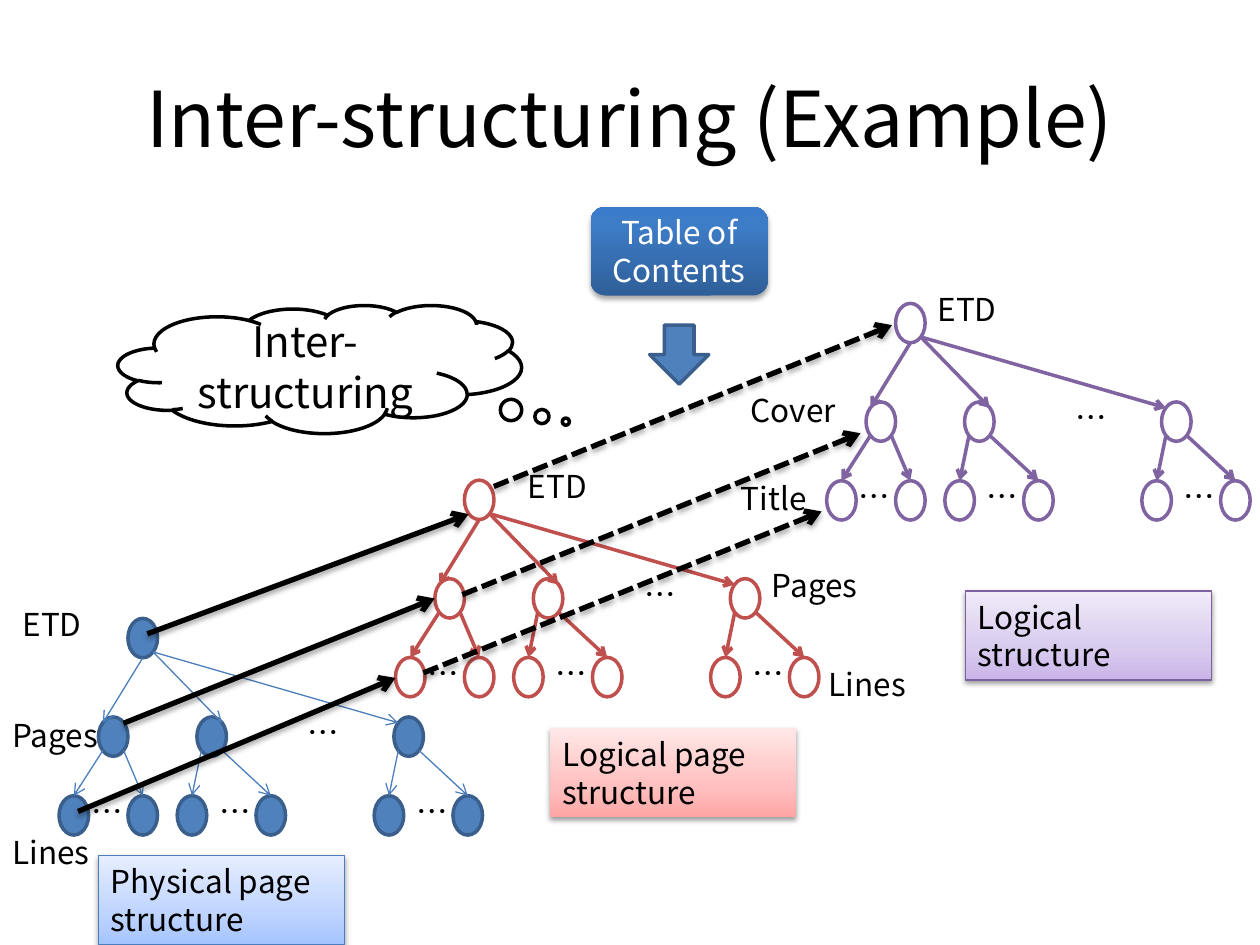
from lxml.etree import SubElement
from pptx import Presentation
from pptx.dml.color import RGBColor
from pptx.enum.dml import MSO_LINE
from pptx.enum.shapes import MSO_CONNECTOR, MSO_SHAPE
from pptx.enum.text import MSO_ANCHOR, MSO_AUTO_SIZE, PP_ALIGN
from pptx.oxml.ns import qn
from pptx.util import Pt

FONT = "Noto Sans CJK KR"
BLACK, WHITE = "000000", "FFFFFF"
BOX = {"word_wrap": True, "auto_size": MSO_AUTO_SIZE.SHAPE_TO_FIT_TEXT}
MIDDLE = {"word_wrap": True, "vertical_anchor": MSO_ANCHOR.MIDDLE}

ROOT = (7, 0)
MIDS = [(4, 10), (14, 10), (34, 10)]
LEAVES = [(0, 18), (7, 18), (12, 18), (20, 18), (32, 18), (40, 18)]
DOTS = [(24, 9), (2, 17), (15, 17), (35, 17)]
NEAR, FAR = 0.15, 0.85
ROOT_EDGES = [((0.5, 1), (NEAR, NEAR)), ((FAR, FAR), (FAR, NEAR)), ((FAR, FAR), (NEAR, NEAR))]

LEVELS = [
    {"at": (33.75, 353.4), "fill": "4F81BD", "outline": "3A5F8C", "edge": "4B7EBC", "weight": 0.75,
     "labels": [("ETD", -28, -11.5), ("Pages", -33.75, 52), ("Lines", -33.75, 119)],
     "panel": ("Physical page structure", 22.5, 135.5),
     "stops": [(0, "A4C4FF"), (35, "BFD4FF"), (100, "E6EEFF")], "border": "4B7EBC"},
    {"at": (226, 274.4), "fill": WHITE, "outline": "C0504D", "edge": "C0504D", "weight": 2,
     "labels": [("ETD", 68.5, -11), ("Pages", 208, 45.4), ("Lines", 240.5, 102.2)],
     "panel": ("Logical page structure", 88.5, 141.8),
     "stops": [(0, "FFA6A5"), (35, "FFC0BF"), (100, "FFE7E7")], "border": None},
    {"at": (472.4, 173.4), "fill": WHITE, "outline": "8064A2", "edge": "8064A2", "weight": 2,
     "labels": [("ETD", 56.2, -11.5), ("Cover", -50.4, 46.2), ("Title", -56.2, 96.6)],
     "panel": ("Logical structure", 79.2, 164.3),
     "stops": [(0, "C9B5E8"), (35, "D8CBEE"), (100, "F0EAF9")], "border": "7D60A0"},
]
SOLID = [((44.6, 463.7), (226, 387.4)), ((70.6, 413.3), (248.4, 342)), ((84.2, 362.2), (267.8, 293.8))]
DASHED = [((x, y), (x + 227.5, y - 92.2)) for x, y in [(282.2, 278), (264.2, 339.8), (242, 384.5)]]


def rgb(value):
    """Turn a hex string into a colour."""
    return RGBColor.from_string(value)


def assign(obj, fmt):
    """Set every attribute named in a dict of format values."""
    for name, value in fmt.items():
        setattr(obj, name, value)


def write(shape, text, size=18, color=BLACK, align=PP_ALIGN.LEFT, frame=BOX):
    """Put one formatted paragraph into a shape."""
    tf = shape.text_frame
    assign(tf, frame)
    p = tf.paragraphs[0]
    p.alignment = align
    r = p.add_run()
    r.text = text
    assign(r.font, {"name": FONT, "size": Pt(size)})
    r.font.color.rgb = rgb(color)


def add_shadow(effects, alpha, dist):
    """Add a soft shadow that falls straight down."""
    shadow = SubElement(effects, qn("a:outerShdw"), blurRad=str(Pt(3.1)), dist=str(Pt(dist)),
                        dir="5400000", rotWithShape="0")
    color = SubElement(shadow, qn("a:srgbClr"), val=BLACK)
    SubElement(color, qn("a:alpha"), val=str(alpha * 1000))


def add_block(s, kind, box, fill=None, line=None, weight=2):
    """Add a preset shape with a plain fill and outline."""
    sp = s.shapes.add_shape(kind, *map(Pt, box))
    sp.shadow.inherit = False
    if fill:
        sp.fill.solid()
        sp.fill.fore_color.rgb = rgb(fill)
    if line:
        sp.line.color.rgb = rgb(line)
        sp.line.width = Pt(weight)
    else:
        sp.line.fill.background()
    return sp


def add_gradient_block(s, kind, box, stops, line=None, alpha=38, dist=1.6):
    """Add a shadowed shape with a gradient that rises from the bottom."""
    sp = add_block(s, kind, box, line=line, weight=0.75)
    sp.fill.gradient()
    sp.fill.gradient_angle = 90
    stop_list = sp.element.spPr.find(qn("a:gradFill")).find(qn("a:gsLst"))
    for stop in list(stop_list):
        stop_list.remove(stop)
    for position, color in stops:
        stop = SubElement(stop_list, qn("a:gs"), pos=str(position * 1000))
        SubElement(stop, qn("a:srgbClr"), val=color)
    add_shadow(sp.element.spPr.find(qn("a:effectLst")), alpha, dist)
    return sp


def add_arrow(s, start, end, color, weight, dash=None, shadow=False):
    """Add a straight line with an open arrowhead at its end."""
    c = s.shapes.add_connector(MSO_CONNECTOR.STRAIGHT, *map(Pt, (*start, *end)))
    c.line.color.rgb = rgb(color)
    assign(c.line, {"width": Pt(weight), "dash_style": dash})
    spPr = c.element.spPr
    SubElement(spPr.find(qn("a:ln")), qn("a:tailEnd"), type="arrow")
    effects = SubElement(spPr, qn("a:effectLst"))
    if shadow:
        add_shadow(effects, 35, 1.8)


def add_label(s, text, x, y, w=67.5):
    """Add a one-line text box."""
    write(s.shapes.add_textbox(Pt(x), Pt(y), Pt(w), Pt(29)), text)


def add_tree(s, x, y, w, level):
    """Draw a three-tier tree on a grid of 43 units across its width."""
    unit = w / 43

    def at(node, part=(0, 0)):
        return x + (node[0] + 3 * part[0]) * unit, y + (node[1] + 4 * part[1]) * unit

    for node in [ROOT, *MIDS, *LEAVES]:
        add_block(s, MSO_SHAPE.OVAL, (*at(node), 3 * unit, 4 * unit), level["fill"], level["outline"])
    for dots in DOTS:
        add_label(s, "…", *at(dots), 5 * unit)
    edges = [(at(ROOT, a), at(mid, b)) for mid, (a, b) in zip(MIDS, ROOT_EDGES)]
    for i, leaf in enumerate(LEAVES):
        edges.append((at(MIDS[i // 2], (FAR if i % 2 else NEAR, FAR)), at(leaf, (0.5, 0))))
    for start, end in edges:
        add_arrow(s, start, end, level["edge"], level["weight"])


def add_level(s, x, y, w, level):
    """Draw one structure: its tree, tier labels and name panel."""
    add_tree(s, x, y, w, level)
    for text, dx, dy in level["labels"]:
        add_label(s, text, x + dx, y + dy)
    text, dx, dy = level["panel"]
    panel = add_gradient_block(s, MSO_SHAPE.RECTANGLE, (x + dx, y + dy, 140.6, 50.9),
                               level["stops"], level["border"])
    write(panel, text)


def add_contents(s, x, y, w, h):
    """Draw the table of contents block and the arrow below it."""
    block = add_gradient_block(s, MSO_SHAPE.ROUNDED_RECTANGLE, (x, y, w, 0.5 * h),
                               [(0, "2F5F99"), (80, "3D7CC7"), (100, "3A7CCB")], alpha=35, dist=1.8)
    write(block, "Table of Contents", 18, WHITE, PP_ALIGN.CENTER, MIDDLE)
    side = h / 3
    add_block(s, MSO_SHAPE.DOWN_ARROW, (x + (w - side) / 2, y + h - side, side, side), "4F81BD", "3A5F8C")


def add_thought(s, x, y, w, h):
    """Draw the thought cloud."""
    cloud = add_block(s, MSO_SHAPE.CLOUD_CALLOUT, (x, y, w, h), WHITE, BLACK)
    cloud.adjustments[0], cloud.adjustments[1] = 0.61, 0.41
    write(cloud, "Inter-structuring", 24, BLACK, PP_ALIGN.CENTER, MIDDLE)


def add_title(s, x, y, w, h):
    """Place and format the title placeholder."""
    title = s.shapes.title
    assign(title, {"left": Pt(x), "top": Pt(y), "width": Pt(w), "height": Pt(h)})
    write(title, "Inter-structuring (Example)", 44, BLACK, PP_ALIGN.CENTER, MIDDLE)


def main():
    """Build the slide and save it."""
    prs = Presentation()
    assign(prs, {"slide_width": Pt(720), "slide_height": Pt(540)})
    s = prs.slides.add_slide(prs.slide_layouts[5])
    add_title(s, 36, 21.6, 648, 90)
    for level in LEVELS:
        add_level(s, *level["at"], 242, level)
    for links, dash in [(SOLID, None), (DASHED, MSO_LINE.SQUARE_DOT)]:
        for start, end in links:
            add_arrow(s, start, end, BLACK, 3, dash, True)
    add_contents(s, 337.5, 118.2, 101.3, 101.3)
    add_thought(s, 67.5, 174.4, 230.5, 73.2)
    prs.save("out.pptx")


if __name__ == "__main__":
    main()
